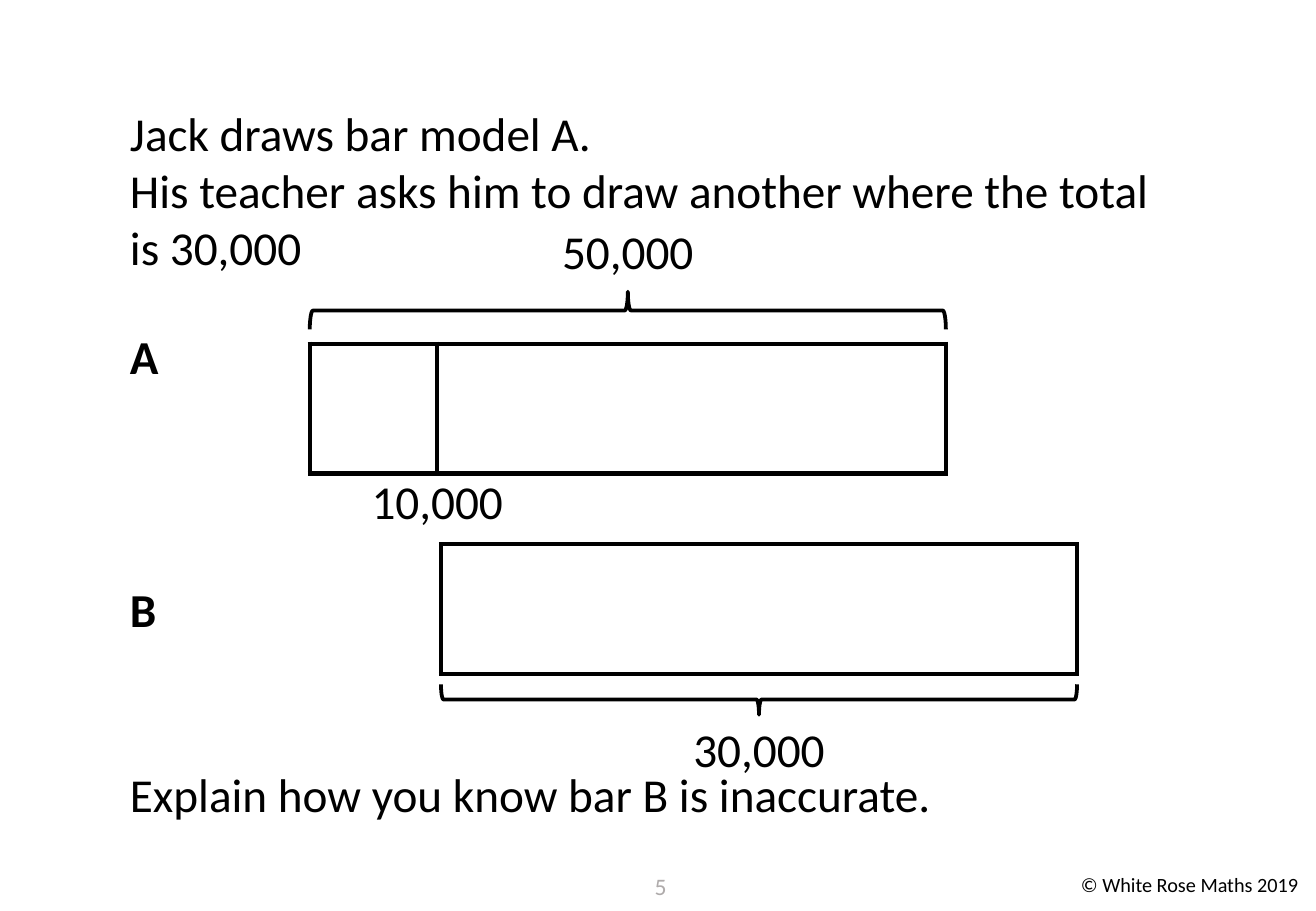
import pptx
import pptx.dml.color
import pptx.enum.shapes
import pptx.enum.text
import pptx.oxml
import pptx.util
from dataclasses import dataclass

Pt = pptx.util.Pt
RGB = pptx.dml.color.RGBColor
ALIGN = pptx.enum.text.PP_ALIGN
BRACE = pptx.enum.shapes.MSO_SHAPE.LEFT_BRACE
NS = 'xmlns:a="http://schemas.openxmlformats.org/drawingml/2006/main"'


@dataclass(frozen=True)
class Theme:
    font: str = "Calibri"
    ink: str = "000000"
    muted: str = "AFABAB"
    body: int = 28
    number: int = 14
    credit: int = 12
    border: float = 3
    brace: float = 2.25


THEME = Theme()


def style_font(font, size, color, bold=False):
    values = {"name": THEME.font, "size": Pt(size), "bold": bold}
    for name, value in values.items():
        setattr(font, name, value)
    font.color.rgb = RGB.from_string(color)


def add_text(slide, box, lines, size=THEME.body, color=THEME.ink,
             align=ALIGN.LEFT, wrap=True):
    """Each line is (text, bold, space before)."""
    frame = slide.shapes.add_textbox(*map(Pt, box)).text_frame
    frame.word_wrap = wrap
    for index, (text, bold, gap) in enumerate(lines):
        line = frame.paragraphs[0] if index == 0 else frame.add_paragraph()
        line.alignment = align
        if gap:
            line.space_before = Pt(gap)
        run = line.add_run()
        run.text = text
        style_font(run.font, size, color, bold)


def add_value(slide, center, top, text):
    width, height = 130, 41
    add_text(slide, (center - width / 2, top, width, height),
             [(text, False, 0)], align=ALIGN.CENTER)


def add_brace(slide, left, top, span, depth, rotation):
    # The unrotated frame shares its centre with the visible brace
    center, middle = left + span / 2, top + depth / 2
    brace = slide.shapes.add_shape(
        BRACE, *map(Pt, (center - depth / 2, middle - span / 2, depth, span)))
    brace.rotation = rotation
    brace.shadow.inherit = False
    brace.fill.background()
    brace.line.color.rgb = RGB.from_string(THEME.ink)
    brace.line.width = Pt(THEME.brace)


def add_bar(slide, box, parts):
    left, top, width, height = box
    table = slide.shapes.add_table(1, len(parts), *map(Pt, box)).table
    table.first_row = table.horz_banding = False
    table.rows[0].height = Pt(height)
    for index, part in enumerate(parts):
        table.columns[index].width = Pt(part)
        cell = table.cell(0, index)
        properties = cell._tc.get_or_add_tcPr()
        for side in ("lnL", "lnR", "lnT", "lnB"):
            properties.append(pptx.oxml.parse_xml(
                f'<a:{side} {NS} w="{Pt(THEME.border)}"><a:solidFill>'
                f'<a:srgbClr val="{THEME.ink}"/></a:solidFill></a:{side}>'))
        cell.fill.background()


def add_bar_a(slide, box):
    left, top, width, height = box
    first, depth = 75.6, 22.3
    brace_top = top - 8.6 - depth
    add_bar(slide, box, [first, width - first])
    add_brace(slide, left, brace_top, width, depth, 90)
    add_value(slide, left + width / 2, brace_top - 44.6, "50,000")
    add_value(slide, left + first, top + height - 4.4, "10,000")


def add_bar_b(slide, box):
    left, top, width, height = box
    depth = 18
    brace_top = top + height + 6
    add_bar(slide, box, [width])
    add_brace(slide, left, brace_top, width, depth, 270)
    add_value(slide, left + width / 2, brace_top + depth, "30,000")


def add_question(slide, box):
    add_text(slide, box, [
        ("Jack draws bar model A.", False, 0),
        ("His teacher asks him to draw another where the total is 30,000",
         False, 0),
        ("A", True, 31),
        ("B", True, 116.5),
        ("Explain how you know bar B is inaccurate.", False, 76),
    ])


def add_footer(slide, box):
    left, top, width, height = box
    add_text(slide, (left + 373, top, 37, height), [("5", False, 0)],
             THEME.number, THEME.muted, ALIGN.CENTER)
    add_text(slide, (left + 633.6, top, width - 633.6, 22),
             [("© White Rose Maths 2019", False, 0)], THEME.credit, wrap=False)


def main():
    deck = pptx.Presentation()
    deck.slide_width, deck.slide_height = Pt(780), Pt(540)
    slide = deck.slides.add_slide(deck.slide_layouts[6])

    # Question text, bar models and footer
    add_question(slide, (70, 58.5, 634, 438))
    add_bar_a(slide, (183.6, 203.8, 377, 77))
    add_bar_b(slide, (261.4, 322.6, 377, 77))
    add_footer(slide, (0, 513.4, 780, 26.6))

    deck.save("out.pptx")


if __name__ == "__main__":
    main()
